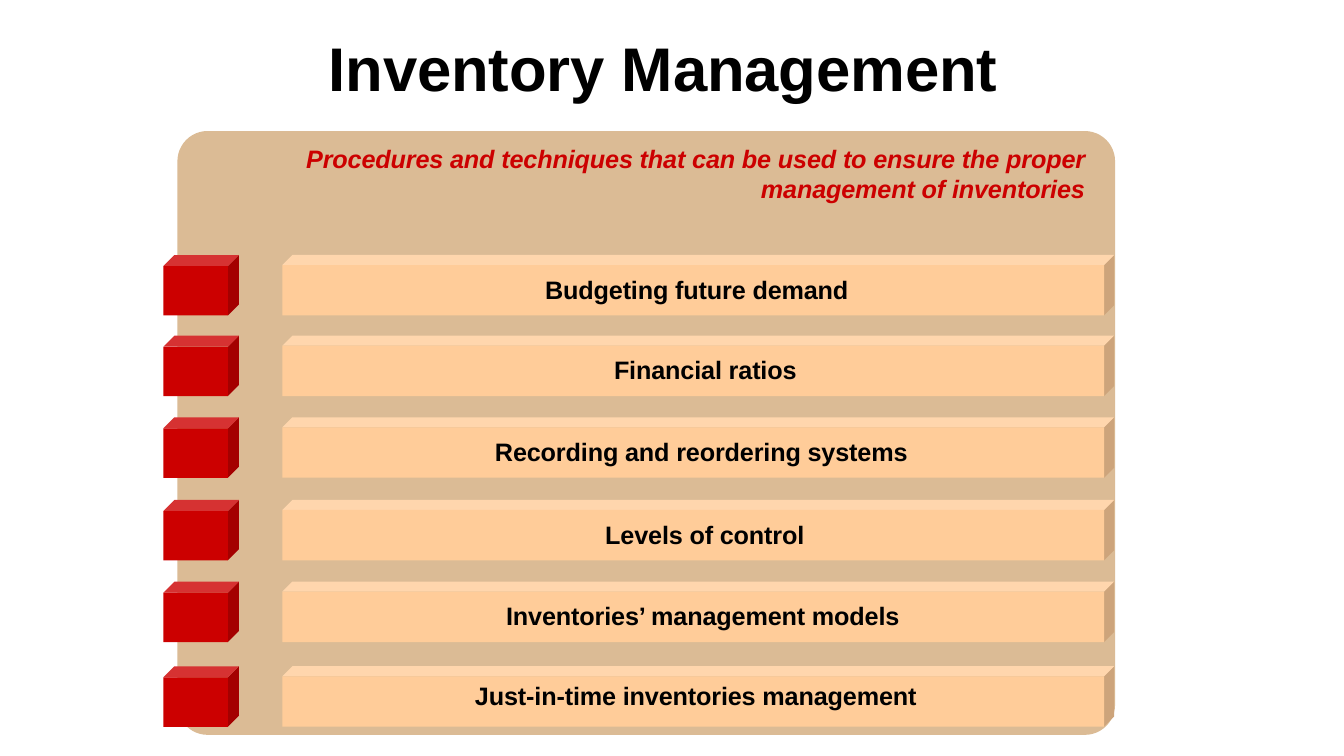
from pptx import Presentation
from pptx.dml.color import RGBColor
from pptx.enum.shapes import MSO_SHAPE
from pptx.enum.text import MSO_ANCHOR, PP_ALIGN
from pptx.util import Inches, Pt

RECTANGLE = MSO_SHAPE.RECTANGLE
ROUNDED = MSO_SHAPE.ROUNDED_RECTANGLE
LEFT, CENTER, RIGHT = PP_ALIGN.LEFT, PP_ALIGN.CENTER, PP_ALIGN.RIGHT
TOP, MIDDLE = MSO_ANCHOR.TOP, MSO_ANCHOR.MIDDLE

COLORS = {
    "black": "000000", "red": "CC0000", "red_dark": "A40000", "red_light": "D63232",
    "panel": "DBBB95", "peach": "FFCC99", "peach_dark": "CDA47B", "peach_light": "FFD6AD",
}

# Label, top of the row, left inset and bottom inset of the label
TECHNIQUES = [
    ("Budgeting future demand", 2.53, 0.07, 0.02),
    ("Financial ratios", 3.33, 0.24, 0.02),
    ("Recording and reordering systems", 4.14, 0.16, 0.02),
    ("Levels of control", 4.96, 0.23, 0.02),
    ("Inventories’ management models", 5.77, 0.19, 0.02),
    ("Just-in-time inventories management", 6.61, 0.05, 0.12),
]


def color(name):
    return RGBColor.from_string(COLORS[name])


def paint(shape, fill):
    shape.shadow.inherit = False
    shape.fill.solid()
    shape.fill.fore_color.rgb = color(fill)
    shape.line.fill.background()


def write_text(shape, lines, size=18, fill="black", italic=False, align=LEFT,
               anchor=TOP, insets=(0, 0, 0, 0), line_spacing=None, wrap=True):
    frame = shape.text_frame
    frame.word_wrap = wrap
    frame.vertical_anchor = anchor
    (frame.margin_left, frame.margin_top,
     frame.margin_right, frame.margin_bottom) = (Inches(inset) for inset in insets)
    for index, line in enumerate(lines):
        paragraph = frame.add_paragraph() if index else frame.paragraphs[0]
        paragraph.alignment = align
        if line_spacing:
            paragraph.line_spacing = Pt(line_spacing)
        run = paragraph.add_run()
        run.text = line
        run.font.name = "Arial"
        run.font.size = Pt(size)
        run.font.bold = True
        run.font.italic = italic
        run.font.color.rgb = color(fill)
        # Letters set 0.1 pt tighter
        run.font._element.set("spc", "-10")


def add_polygon(slide, points, fill):
    corners = [(Inches(x), Inches(y)) for x, y in points]
    builder = slide.shapes.build_freeform(*corners[0], scale=1.0)
    builder.add_line_segments(corners[1:], close=True)
    paint(builder.convert_to_shape(), fill)


def add_block(slide, left, top, width, height, depth, hue):
    """Draw a block with lit top and shaded side; return its front face."""
    right, bottom = left + width, top + height
    edge, front_top = right - depth, top + depth
    add_polygon(slide, [(right, top), (edge, front_top), (edge, bottom),
                        (right, bottom - depth)], hue + "_dark")
    add_polygon(slide, [(right, top), (left + depth, top), (left, front_top),
                        (edge, front_top)], hue + "_light")
    face = slide.shapes.add_shape(RECTANGLE, Inches(left), Inches(front_top),
                                  Inches(width - depth), Inches(height - depth))
    paint(face, hue)
    return face


def add_title(slide, left, top, width, height):
    box = slide.shapes.add_textbox(Inches(left), Inches(top), Inches(width), Inches(height))
    write_text(box, ["Inventory Management"], size=44, insets=(0, 0.08, 0, 0), wrap=False)


def add_panel(slide, left, top, width, height):
    panel = slide.shapes.add_shape(ROUNDED, Inches(left), Inches(top),
                                   Inches(width), Inches(height))
    panel.adjustments[0] = 0.05
    paint(panel, "panel")
    # Definition at the head of the panel
    box = slide.shapes.add_textbox(Inches(left + 1.15), Inches(top + 0.13),
                                   Inches(width - 1.45), Inches(0.62))
    write_text(box, ["Procedures and techniques that can be used to ensure the proper",
                     "management of inventories"],
               fill="red", italic=True, align=RIGHT, line_spacing=21.3, wrap=False)


def add_technique(slide, left, top, width, height, label, indent, lift):
    add_block(slide, left, top, 0.75, height, 0.11, "red")
    bar_offset = 1.18
    bar = add_block(slide, left + bar_offset, top, width - bar_offset, height, 0.1, "peach")
    write_text(bar, [label], align=CENTER, anchor=MIDDLE, insets=(indent, 0, 0, lift))


def main():
    presentation = Presentation()
    presentation.slide_width = Inches(13.33)
    presentation.slide_height = Inches(7.5)
    slide = presentation.slides.add_slide(presentation.slide_layouts[6])

    add_title(slide, 3.26, 0.22, 6.68, 0.76)
    add_panel(slide, 1.76, 1.3, 9.3, 5.99)
    for label, top, indent, lift in TECHNIQUES:
        add_technique(slide, 1.62, top, 9.43, 0.6, label, indent, lift)

    presentation.save("out.pptx")


if __name__ == "__main__":
    main()
